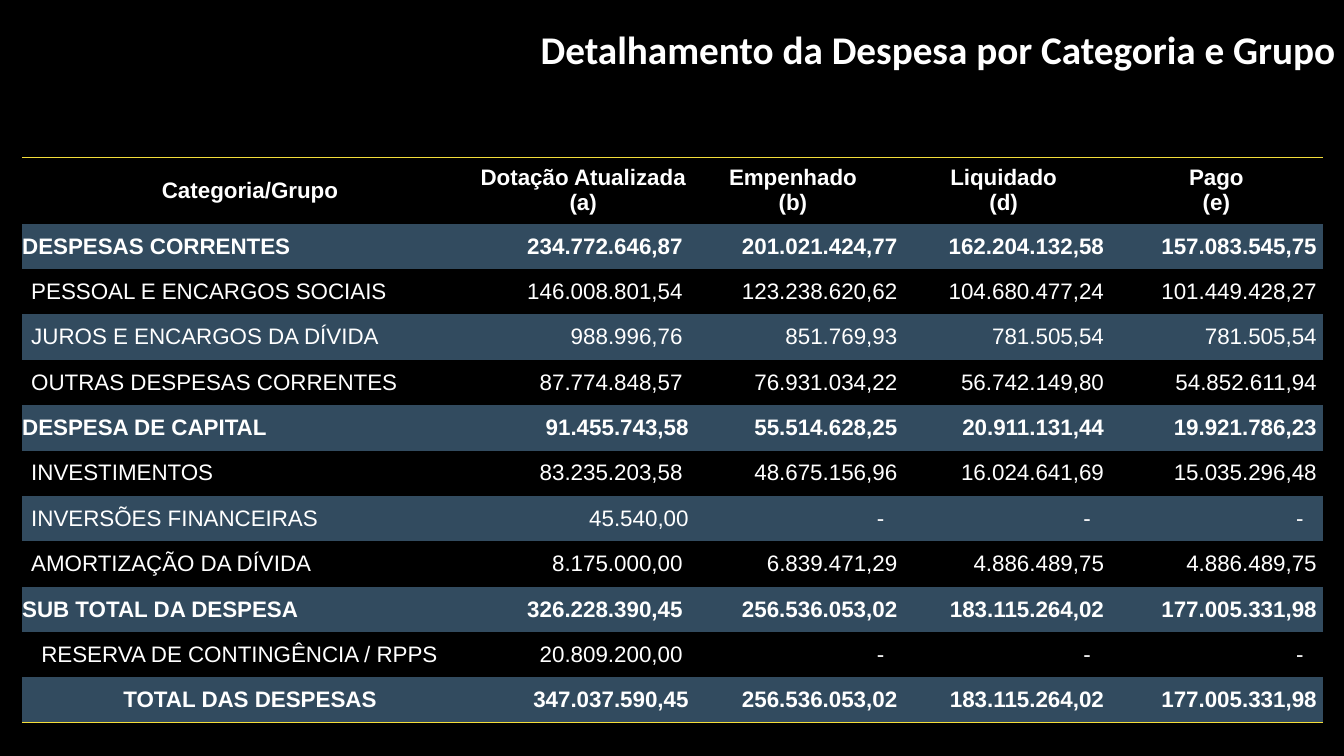
import pptx
import pptx.dml.color
import pptx.enum.text
import pptx.oxml
import pptx.oxml.ns
import pptx.util
from pptx.util import Inches

ALIGN = pptx.enum.text.PP_ALIGN
WHITE, BLACK, BAND, GOLD = "FFFFFF", "000000", "324B5F", "F4DE3A"
PLAIN_TABLE_STYLE = "{2D5ABB26-0587-4C30-8999-92F81FD0307C}"
COLUMN_WIDTHS = [4.52, 2.09, 2.07, 2.11, 2.11]
HEADER_HEIGHT, ROW_HEIGHT = 0.66, 0.45
NUMBER_MARGINS = [0.06, 0, 0.06, 0.06]
DASH_MARGIN = 0.13
HEADERS = ["Categoria/Grupo", "Dotação Atualizada\n(a)", "Empenhado\n(b)", "Liquidado\n(d)", "Pago\n(e)"]
MAIN_ROWS = {"DESPESAS CORRENTES", "DESPESA DE CAPITAL", "SUB TOTAL DA DESPESA", "TOTAL DAS DESPESAS"}
FLUSH_ROWS = {"DESPESA DE CAPITAL", "INVERSÕES FINANCEIRAS", "TOTAL DAS DESPESAS"}
RESERVE, TOTAL = "RESERVA DE CONTINGÊNCIA / RPPS", "TOTAL DAS DESPESAS"
EXPENSES = [
    ["DESPESAS CORRENTES", "234.772.646,87", "201.021.424,77", "162.204.132,58", "157.083.545,75"],
    ["PESSOAL E ENCARGOS SOCIAIS", "146.008.801,54", "123.238.620,62", "104.680.477,24", "101.449.428,27"],
    ["JUROS E ENCARGOS DA DÍVIDA", "988.996,76", "851.769,93", "781.505,54", "781.505,54"],
    ["OUTRAS DESPESAS CORRENTES", "87.774.848,57", "76.931.034,22", "56.742.149,80", "54.852.611,94"],
    ["DESPESA DE CAPITAL", "91.455.743,58", "55.514.628,25", "20.911.131,44", "19.921.786,23"],
    ["INVESTIMENTOS", "83.235.203,58", "48.675.156,96", "16.024.641,69", "15.035.296,48"],
    ["INVERSÕES FINANCEIRAS", "45.540,00", "-", "-", "-"],
    ["AMORTIZAÇÃO DA DÍVIDA", "8.175.000,00", "6.839.471,29", "4.886.489,75", "4.886.489,75"],
    ["SUB TOTAL DA DESPESA", "326.228.390,45", "256.536.053,02", "183.115.264,02", "177.005.331,98"],
    [RESERVE, "20.809.200,00", "-", "-", "-"],
    [TOTAL, "347.037.590,45", "256.536.053,02", "183.115.264,02", "177.005.331,98"],
]


def color(value):
    """Turn a hex string into a colour."""
    return pptx.dml.color.RGBColor.from_string(value)


def write_text(frame, text, size=16, font="Arial", bold=False, align=ALIGN.LEFT):
    """Write the lines of text as formatted paragraphs."""
    frame.text = text
    for paragraph in frame.paragraphs:
        paragraph.alignment = align
        for run in paragraph.runs:
            run.font.size = pptx.util.Pt(size)
            run.font.name = font
            run.font.bold = bold
            run.font.color.rgb = color(WHITE)


def add_border(cell, side):
    """Draw a thin gold line on one side of a cell."""
    line = pptx.oxml.parse_xml(
        f'<a:{side} {pptx.oxml.ns.nsdecls("a")} w="12700"><a:solidFill>'
        f'<a:srgbClr val="{GOLD}"/></a:solidFill></a:{side}>')
    cell._tc.get_or_add_tcPr().insert(0, line)


def fill_cell(cell, text, fill=None, left=0, right=0, **text_format):
    """Set the margins, fill and text of a cell."""
    cell.margin_left, cell.margin_right = Inches(left), Inches(right)
    cell.margin_top = cell.margin_bottom = 0
    cell.vertical_anchor = pptx.enum.text.MSO_ANCHOR.MIDDLE
    if fill:
        cell.fill.solid()
        cell.fill.fore_color.rgb = color(fill)
    else:
        cell.fill.background()
    write_text(cell.text_frame, text, **text_format)


def number_margin(name, column, value):
    """Give the space to the right of a number."""
    margin = 0 if column == 0 and name in FLUSH_ROWS else NUMBER_MARGINS[column]
    return margin + (DASH_MARGIN if value == "-" else 0)


def fill_expense_row(table, index, name, values):
    """Fill one row with an expense name and its values."""
    bold = name in MAIN_ROWS
    fill = BAND if index % 2 else None
    indent = 0 if bold else 0.19 if name == RESERVE else 0.09
    fill_cell(table.cell(index, 0), name, fill, left=indent, bold=bold,
              align=ALIGN.CENTER if name == TOTAL else ALIGN.LEFT)
    for column, value in enumerate(values):
        fill_cell(table.cell(index, column + 1), value, fill, bold=bold, align=ALIGN.RIGHT,
                  right=number_margin(name, column, value))


def add_expense_table(slide):
    """Add the table of expenses."""
    row_count = len(EXPENSES) + 1
    frame = slide.shapes.add_table(row_count, len(HEADERS), Inches(0.22), Inches(1.56),
                                   Inches(sum(COLUMN_WIDTHS)),
                                   Inches(HEADER_HEIGHT + ROW_HEIGHT * len(EXPENSES)))
    table = frame.table
    table.first_row = table.horz_banding = False
    table._tbl.tblPr.find(pptx.oxml.ns.qn("a:tableStyleId")).text = PLAIN_TABLE_STYLE
    for column, width in zip(table.columns, COLUMN_WIDTHS):
        column.width = Inches(width)
    for index, row in enumerate(table.rows):
        row.height = Inches(ROW_HEIGHT if index else HEADER_HEIGHT)
    for column, header in enumerate(HEADERS):
        fill_cell(table.cell(0, column), header, bold=True, align=ALIGN.CENTER)
    for index, (name, *values) in enumerate(EXPENSES, start=1):
        fill_expense_row(table, index, name, values)
    for column in range(len(HEADERS)):
        add_border(table.cell(0, column), "lnT")
        add_border(table.cell(row_count - 1, column), "lnB")


def add_title(slide, text):
    """Add the title at the upper right."""
    box = slide.shapes.add_textbox(Inches(4.91), Inches(0.2), Inches(8.43), Inches(0.57))
    box.text_frame.word_wrap = True
    write_text(box.text_frame, text, size=28, font="Calibri", bold=True, align=ALIGN.RIGHT)


def main():
    """Build and save the slide."""
    presentation = pptx.Presentation()
    presentation.slide_width, presentation.slide_height = Inches(13.33), Inches(7.5)
    slide = presentation.slides.add_slide(presentation.slide_layouts[6])
    slide.background.fill.solid()
    slide.background.fill.fore_color.rgb = color(BLACK)
    add_expense_table(slide)
    add_title(slide, "Detalhamento da Despesa por Categoria e Grupo")
    presentation.save("out.pptx")


if __name__ == "__main__":
    main()
